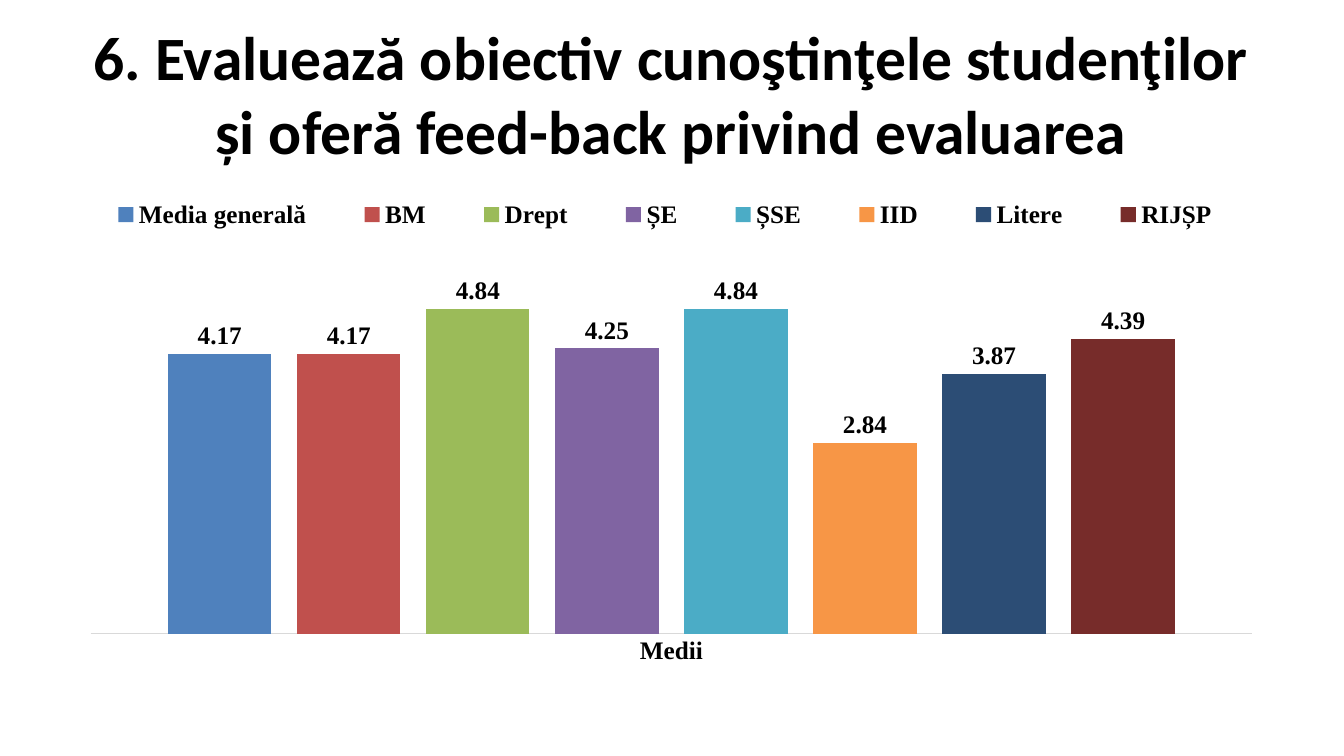
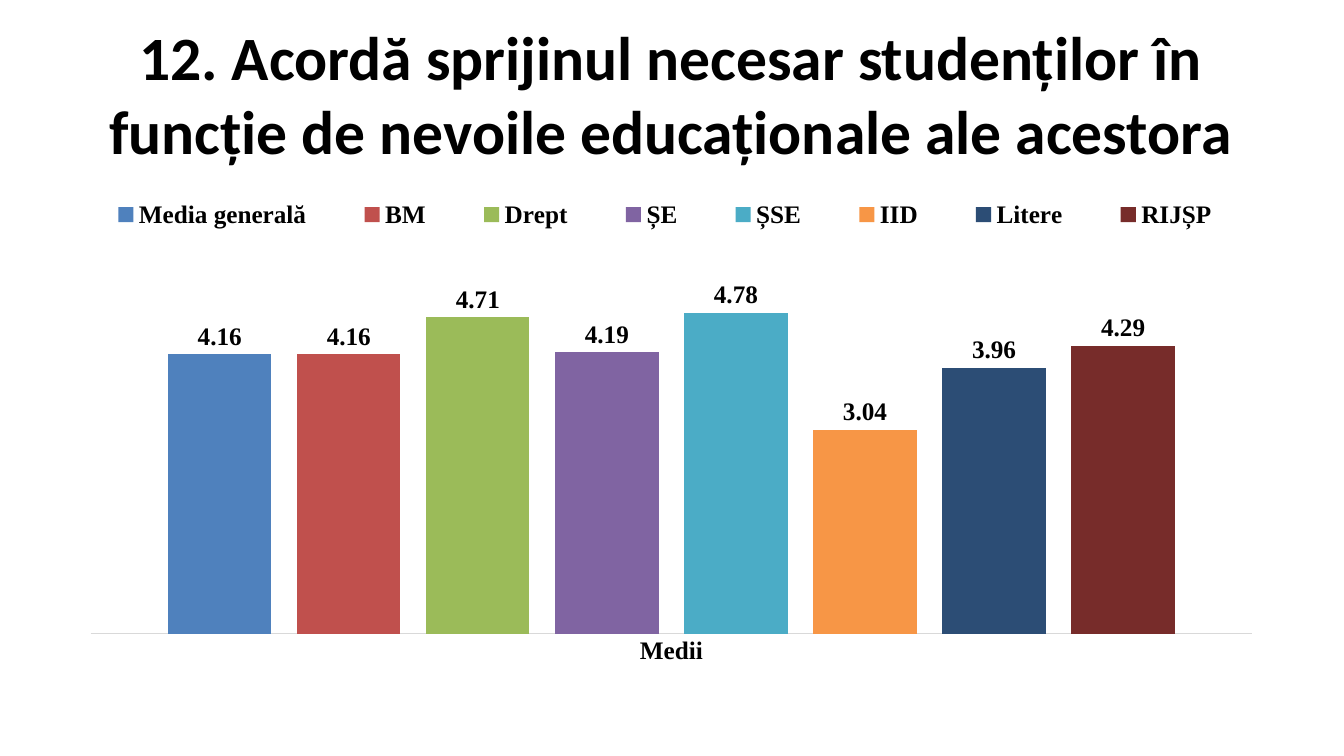
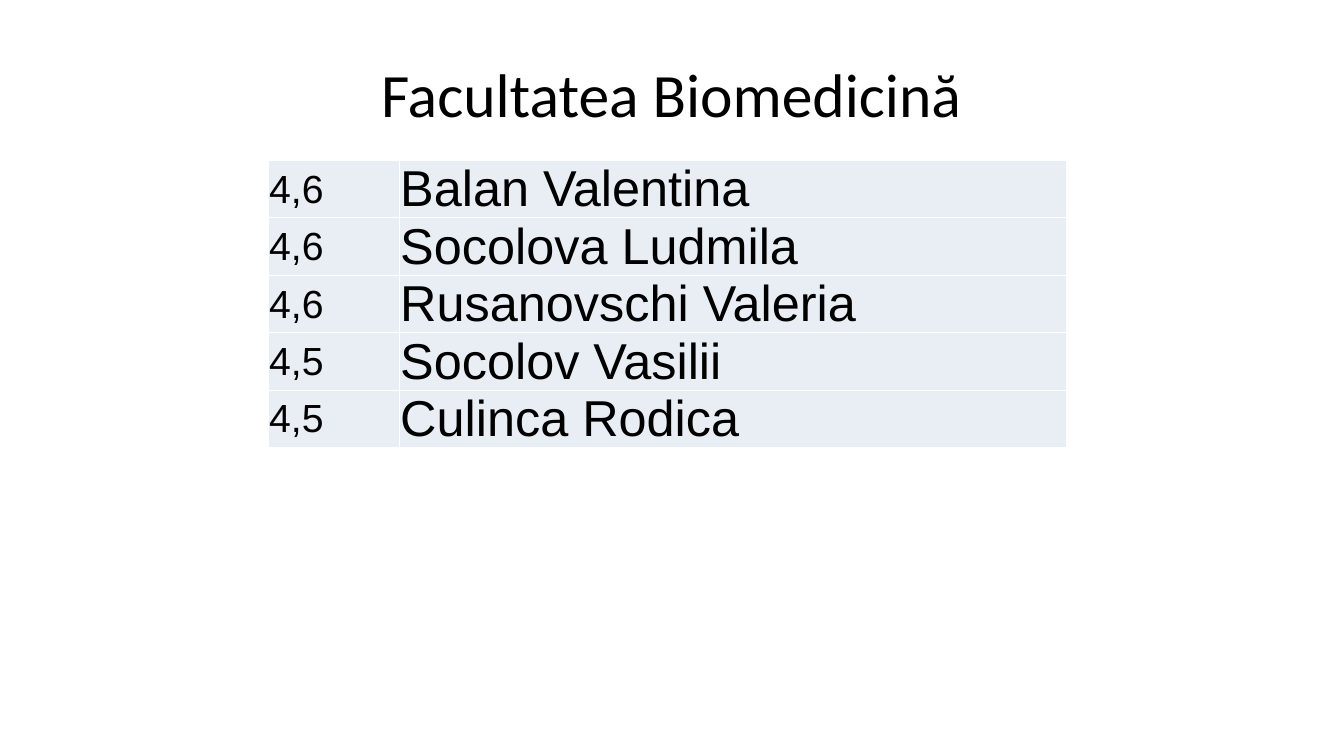
from dataclasses import dataclass

from lxml import etree
from pptx import Presentation
from pptx.chart.data import CategoryChartData
from pptx.dml.color import RGBColor
from pptx.enum import chart as ch, text
from pptx.oxml.ns import qn
from pptx.util import Inches, Pt

BLACK = RGBColor(0x00, 0x00, 0x00)
WHITE = RGBColor(0xFF, 0xFF, 0xFF)
AXIS_GREY = RGBColor(0xD9, 0xD9, 0xD9)
CELL_FILL = RGBColor(0xE9, 0xED, 0xF4)

TITLE_FONT = "Calibri"
CHART_FONT = "Times New Roman"
TABLE_FONT = "Arial"

MARGIN, CONTENT_WIDTH = Inches(0.66), Inches(12)
CHART_HEIGHT = Inches(4.95)

FACULTIES = {
    "Media generală": RGBColor(0x4F, 0x81, 0xBD),
    "BM": RGBColor(0xC0, 0x50, 0x4D),
    "Drept": RGBColor(0x9B, 0xBB, 0x59),
    "ȘE": RGBColor(0x80, 0x64, 0xA2),
    "ȘSE": RGBColor(0x4B, 0xAC, 0xC6),
    "IID": RGBColor(0xF7, 0x96, 0x46),
    "Litere": RGBColor(0x2C, 0x4D, 0x75),
    "RIJȘP": RGBColor(0x77, 0x2C, 0x2A),
}


@dataclass(frozen=True)
class Box:
    left: int
    top: int
    width: int
    height: int


@dataclass(frozen=True)
class Question:
    title: str
    means: tuple[float, ...]  # in the order of FACULTIES


@dataclass(frozen=True)
class Teacher:
    score: str
    name: str


LEGEND_BOX = Box(Inches(0.02), Inches(0.18), Inches(11.83), Inches(0.4))
PLOT_BOX = Box(Inches(0.24), Inches(0.54), Inches(11.52), Inches(4))

QUESTIONS = (
    Question("6. Evaluează obiectiv cunoştinţele studenţilor și oferă feed-back privind evaluarea",
             (4.17, 4.17, 4.84, 4.25, 4.84, 2.84, 3.87, 4.39)),
    Question("12. Acordă sprijinul necesar studenților în funcție de nevoile educaționale ale acestora",
             (4.16, 4.16, 4.71, 4.19, 4.78, 3.04, 3.96, 4.29)),
)

TEACHERS = (
    Teacher("4,6", "Balan Valentina"),
    Teacher("4,6", "Socolova Ludmila"),
    Teacher("4,6", "Rusanovschi Valeria"),
    Teacher("4,5", "Socolov Vasilii"),
    Teacher("4,5", "Culinca Rodica"),
)


def style_font(font, *, name: str, size: float, bold: bool = False) -> None:
    font.name, font.size, font.bold = name, Pt(size), bold
    font.color.rgb = BLACK


def write(tf, content: str, *, name: str, size: float, bold: bool = False,
          align=text.PP_ALIGN.LEFT) -> None:
    p = tf.paragraphs[0]
    p.alignment = align
    r = p.add_run()
    r.text = content
    style_font(r.font, name=name, size=size, bold=bold)


def add_titled_slide(prs, title: str, *, bold: bool):
    s = prs.slides.add_slide(prs.slide_layouts[5])
    sp = s.shapes.title
    sp.left, sp.top, sp.width, sp.height = MARGIN, Inches(0.3), CONTENT_WIDTH, Inches(1.25)
    sp.text_frame.vertical_anchor = text.MSO_ANCHOR.MIDDLE
    write(sp.text_frame, title, name=TITLE_FONT, size=44, bold=bold,
          align=text.PP_ALIGN.CENTER)
    return s


def place_in_chart(parent, box: Box, *, inner: bool = False) -> None:
    """Fix the place of a legend or plot area; the box is relative to the chart's corner."""
    for old in parent.findall(qn("c:layout")):
        parent.remove(old)
    layout = etree.Element(qn("c:layout"))
    manual = etree.SubElement(layout, qn("c:manualLayout"))
    settings = {"layoutTarget": "inner"} if inner else {}
    settings |= {"xMode": "edge", "yMode": "edge",
                 "x": box.left / CONTENT_WIDTH, "y": box.top / CHART_HEIGHT,
                 "w": box.width / CONTENT_WIDTH, "h": box.height / CHART_HEIGHT}
    for tag, value in settings.items():
        etree.SubElement(manual, qn(f"c:{tag}"), val=str(value))
    position = parent.find(qn("c:legendPos"))
    parent.insert(0 if position is None else parent.index(position) + 1, layout)


def add_means_chart(s, means: tuple[float, ...]) -> None:
    data = CategoryChartData(number_format="0.00")
    data.categories = ["Medii"]
    for faculty, mean in zip(FACULTIES, means):
        data.add_series(faculty, [mean])
    chart = s.shapes.add_chart(ch.XL_CHART_TYPE.COLUMN_CLUSTERED, MARGIN, Inches(1.75),
                               CONTENT_WIDTH, CHART_HEIGHT, data).chart
    chart.has_title = False
    chart.has_legend = True
    chart.legend.position = ch.XL_LEGEND_POSITION.TOP
    chart.legend.include_in_layout = False

    plot = chart.plots[0]
    plot.gap_width, plot.overlap, plot.vary_by_categories = 150, -25, False
    plot.has_data_labels = True
    labels = plot.data_labels
    labels.show_value = True
    labels.number_format, labels.number_format_is_linked = "0.00", False
    labels.position = ch.XL_LABEL_POSITION.OUTSIDE_END
    for series, color in zip(plot.series, FACULTIES.values()):
        series.format.fill.solid()
        series.format.fill.fore_color.rgb = color

    axis = chart.category_axis
    axis.major_tick_mark = axis.minor_tick_mark = ch.XL_TICK_MARK.NONE
    axis.format.line.color.rgb = AXIS_GREY
    axis.format.line.width = Pt(0.75)
    values = chart.value_axis
    values.minimum_scale, values.maximum_scale = 0, 6
    values.has_major_gridlines = values.visible = False

    for part in (chart, chart.legend, labels, axis.tick_labels):
        style_font(part.font, name=CHART_FONT, size=18, bold=True)

    chart_xml = chart.element.find(qn("c:chart"))
    place_in_chart(chart_xml.find(qn("c:legend")), LEGEND_BOX)
    place_in_chart(chart_xml.find(qn("c:plotArea")), PLOT_BOX, inner=True)


def set_borders(cell, color: RGBColor, width: float) -> None:
    """Outline all four sides; borders must precede the fill in the cell's XML."""
    tc_pr = cell._tc.get_or_add_tcPr()
    for i, side in enumerate(("a:lnL", "a:lnR", "a:lnT", "a:lnB")):
        ln = etree.Element(qn(side), w=str(Pt(width)))
        fill = etree.SubElement(ln, qn("a:solidFill"))
        etree.SubElement(fill, qn("a:srgbClr"), val=str(color))
        tc_pr.insert(i, ln)


def add_teacher_table(s, teachers: tuple[Teacher, ...]) -> None:
    widths, row_height = (Inches(1.3), Inches(6.62)), Inches(0.57)
    table = s.shapes.add_table(len(teachers), len(widths), Inches(2.66), Inches(1.59),
                               sum(widths), row_height * len(teachers)).table
    table.first_row = table.horz_banding = False
    for column, width in zip(table.columns, widths):
        column.width = width
    for i, teacher in enumerate(teachers):
        for j, (content, size) in enumerate(((teacher.score, 28), (teacher.name, 36))):
            cell = table.cell(i, j)
            cell.margin_left = cell.margin_right = cell.margin_top = Inches(0.01)
            cell.margin_bottom = 0
            cell.vertical_anchor = text.MSO_ANCHOR.MIDDLE
            cell.fill.solid()
            cell.fill.fore_color.rgb = CELL_FILL
            set_borders(cell, WHITE, 1)
            write(cell.text_frame, content, name=TABLE_FONT, size=size)


def main() -> None:
    prs = Presentation()
    prs.slide_width, prs.slide_height = Inches(13.33), Inches(7.5)
    for question in QUESTIONS:
        add_means_chart(add_titled_slide(prs, question.title, bold=True), question.means)
    add_teacher_table(add_titled_slide(prs, "Facultatea Biomedicină", bold=False), TEACHERS)
    prs.save("out.pptx")


if __name__ == "__main__":
    main()
